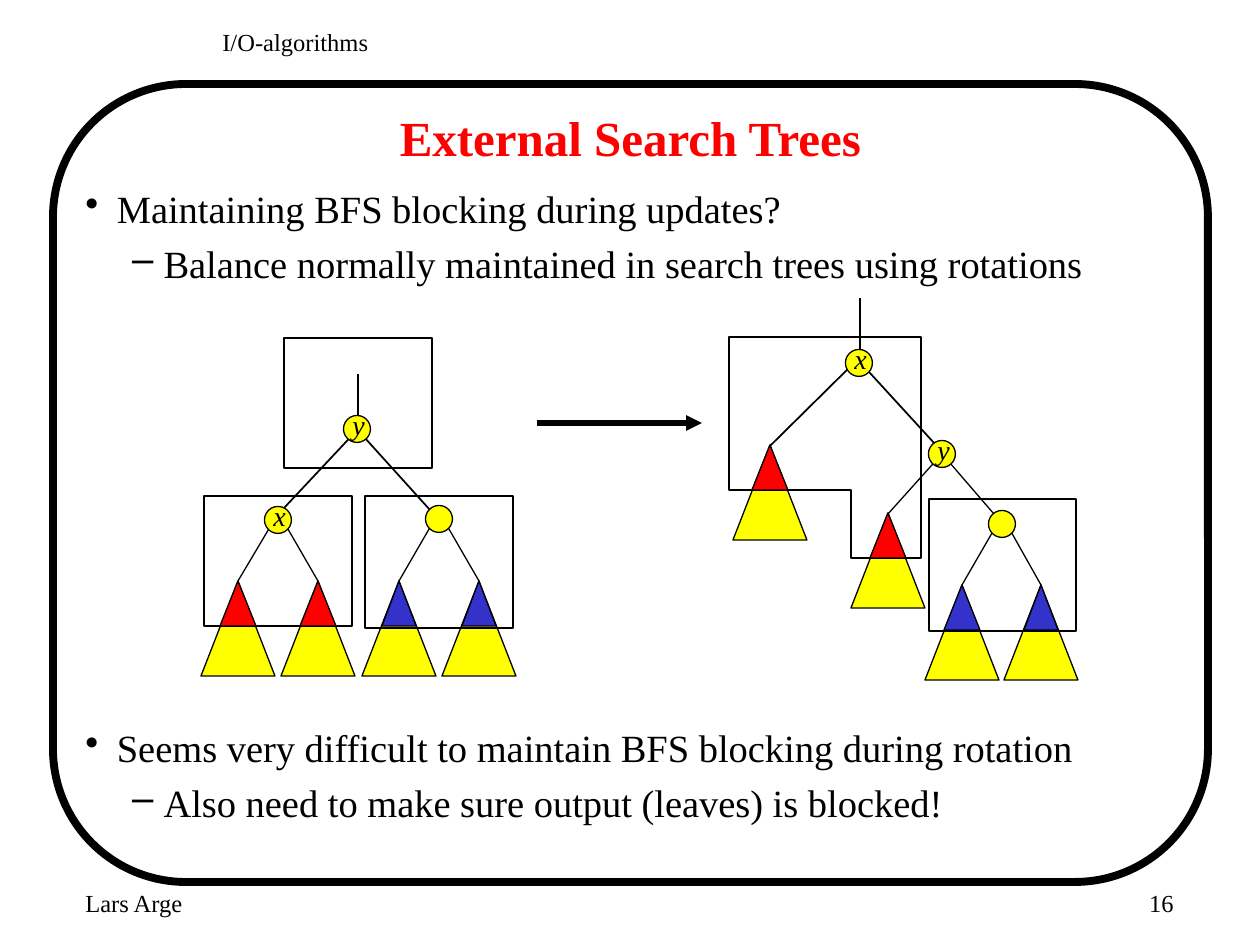
from lxml import etree
from pptx import Presentation, util as u
from pptx.dml.color import RGBColor
from pptx.enum import shapes, text
from pptx.oxml.ns import qn

BLACK = RGBColor(0, 0, 0)
RED = RGBColor(0xFF, 0, 0)
YELLOW = RGBColor(0xFF, 0xFF, 0)
BLUE = RGBColor(0x33, 0x33, 0xCC)
FONT = "Times New Roman"
PX = 914400 / 126

FRAME = (53, 84, 1155, 798)
# words, box, format
LABELS = [
    ("Lars Arge", (73, 882, 262, 63), dict(size=14)),
    ("I/O-algorithms", (210, 21, 829, 53), dict(size=14)),
    ("16", (924, 882, 262, 63), dict(size=14, align="RIGHT")),
    ("External Search Trees", (95, 95, 1071, 84),
     dict(size=28, color=RED, bold=True, align="CENTER", anchor="MIDDLE")),
]
# box, then (level, words)
BULLETS = [
    ((73, 179, 1113, 120), [
        (0, "Maintaining BFS blocking during updates?"),
        (1, "Balance normally maintained in search trees using rotations")]),
    ((73, 718, 1113, 144), [
        (0, "Seems very difficult to maintain BFS blocking during rotation"),
        (1, "Also need to make sure output (leaves) is blocked!")]),
]
BULLET_STYLES = [("•", 0.25), ("–", 0.62)]  # character, left margin in inches

# x1, y1, x2, y2
THICK_EDGES = [
    (358, 427, 358, 374), (360, 427, 270, 523), (430, 510, 355, 427),
    (860, 350, 860, 298), (857, 360, 770, 446), (935, 444, 859, 361),
]
THIN_EDGES = [
    (238, 581, 276, 517), (318, 581, 281, 517),
    (399, 581, 436, 517), (479, 581, 442, 517),
    (1000, 521, 944, 456), (940, 456, 888, 514),
    (962, 585, 999, 521), (1041, 585, 1005, 521),
]
ARROW = (537, 423, 702, 423)
# apex and colour of the blocked top part
SUBTREES = [
    (238, 581, RED), (318, 581, RED), (399, 581, BLUE), (479, 581, BLUE),
    (770, 445, RED), (888, 513, RED), (962, 585, BLUE), (1041, 585, BLUE),
]
SUBTREE_SIZE, TOP_SIZE = (74, 95), (35, 45)
BLOCKS = [(204, 496, 148, 130), (365, 496, 148, 132),
          (284, 338, 148, 130), (929, 499, 147, 132)]
L_BLOCK = [(729, 337), (921, 337), (921, 558), (851, 558), (851, 490), (729, 490)]
# centre and name
NODES = [(278, 520, "x"), (439, 519, ""), (357, 429, "y"),
         (859, 363, "x"), (1002, 524, ""), (942, 454, "y")]
NODE_D = 27


def px(*values):
    return [u.Emu(round(v * PX)) for v in values]


def style(sp, width, fill=None):
    sp.shadow.inherit = False
    if fill is None:
        sp.fill.background()
    else:
        sp.fill.solid()
        sp.fill.fore_color.rgb = fill
    sp.line.color.rgb = BLACK
    sp.line.width = u.Pt(width)


def add_preset(s, kind, box, width, fill=None):
    sp = s.shapes.add_shape(kind, *px(*box))
    style(sp, width, fill)


def add_polygon(s, points, width, fill=None):
    fb = s.shapes.build_freeform(*points[0], scale=PX)
    fb.add_line_segments(points[1:], close=True)
    style(fb.convert_to_shape(), width, fill)


def add_triangle(s, x, y, size, fill):
    w, h = size
    add_polygon(s, [(x, y), (x + w / 2, y + h), (x - w / 2, y + h)], 0.75, fill)


def add_line(s, ends, width, arrow=False):
    c = s.shapes.add_connector(shapes.MSO_CONNECTOR.STRAIGHT, *px(*ends))
    c.line.color.rgb = BLACK
    c.line.width = u.Pt(width)
    if arrow:
        etree.SubElement(c.line._get_or_add_ln(), qn("a:tailEnd"), type="triangle")
    etree.SubElement(c._element.spPr, qn("a:effectLst"))


def add_text(s, box, paragraphs, size, color=BLACK, bold=False, italic=False,
             align="LEFT", anchor="TOP", wrap=True):
    """Paragraphs are (level, words); a level of None has no bullet."""
    tf = s.shapes.add_textbox(*px(*box)).text_frame
    tf.word_wrap = wrap
    tf.vertical_anchor = getattr(text.MSO_ANCHOR, anchor)
    for i, (level, words) in enumerate(paragraphs):
        p = tf.paragraphs[0] if i == 0 else tf.add_paragraph()
        p.alignment = getattr(text.PP_ALIGN, align)
        r = p.add_run()
        r.text = words
        r.font.name, r.font.size = FONT, u.Pt(size)
        r.font.bold, r.font.italic = bold, italic
        r.font.color.rgb = color
        if level is not None:
            char, margin = BULLET_STYLES[level]
            p.level = level
            p.space_before = u.Pt(5)
            pPr = p._p.get_or_add_pPr()
            pPr.set("marL", str(u.Inches(margin)))
            pPr.set("indent", str(u.Inches(-0.25)))
            etree.SubElement(pPr, qn("a:buChar"), char=char)


def main():
    prs = Presentation()
    prs.slide_width, prs.slide_height = px(1260, 945)
    s = prs.slides.add_slide(prs.slide_layouts[6])

    add_preset(s, shapes.MSO_SHAPE.FLOWCHART_ALTERNATE_PROCESS, FRAME, 4.5)
    for words, box, fmt in LABELS:
        add_text(s, box, [(None, words)], **fmt)
    for box, paragraphs in BULLETS:
        add_text(s, box, paragraphs, size=22)

    for edges, width in ((THICK_EDGES, 1), (THIN_EDGES, 0.75)):
        for ends in edges:
            add_line(s, ends, width)
    for x, y, _ in SUBTREES:
        add_triangle(s, x, y, SUBTREE_SIZE, YELLOW)
    for box in BLOCKS:
        add_preset(s, shapes.MSO_SHAPE.RECTANGLE, box, 1.38)
    add_polygon(s, L_BLOCK, 1.38)
    for x, y, color in SUBTREES:
        add_triangle(s, x, y, TOP_SIZE, color)
    for x, y, name in NODES:
        box = (x - NODE_D / 2, y - NODE_D / 2, NODE_D, NODE_D)
        add_preset(s, shapes.MSO_SHAPE.OVAL, box, 0.75, YELLOW)
        if name:
            add_text(s, (x - 20, y - 28, 43, 47), [(None, name)], size=16,
                     italic=True, align="CENTER", wrap=False)
    add_line(s, ARROW, 3, arrow=True)

    prs.save("out.pptx")


if __name__ == "__main__":
    main()
